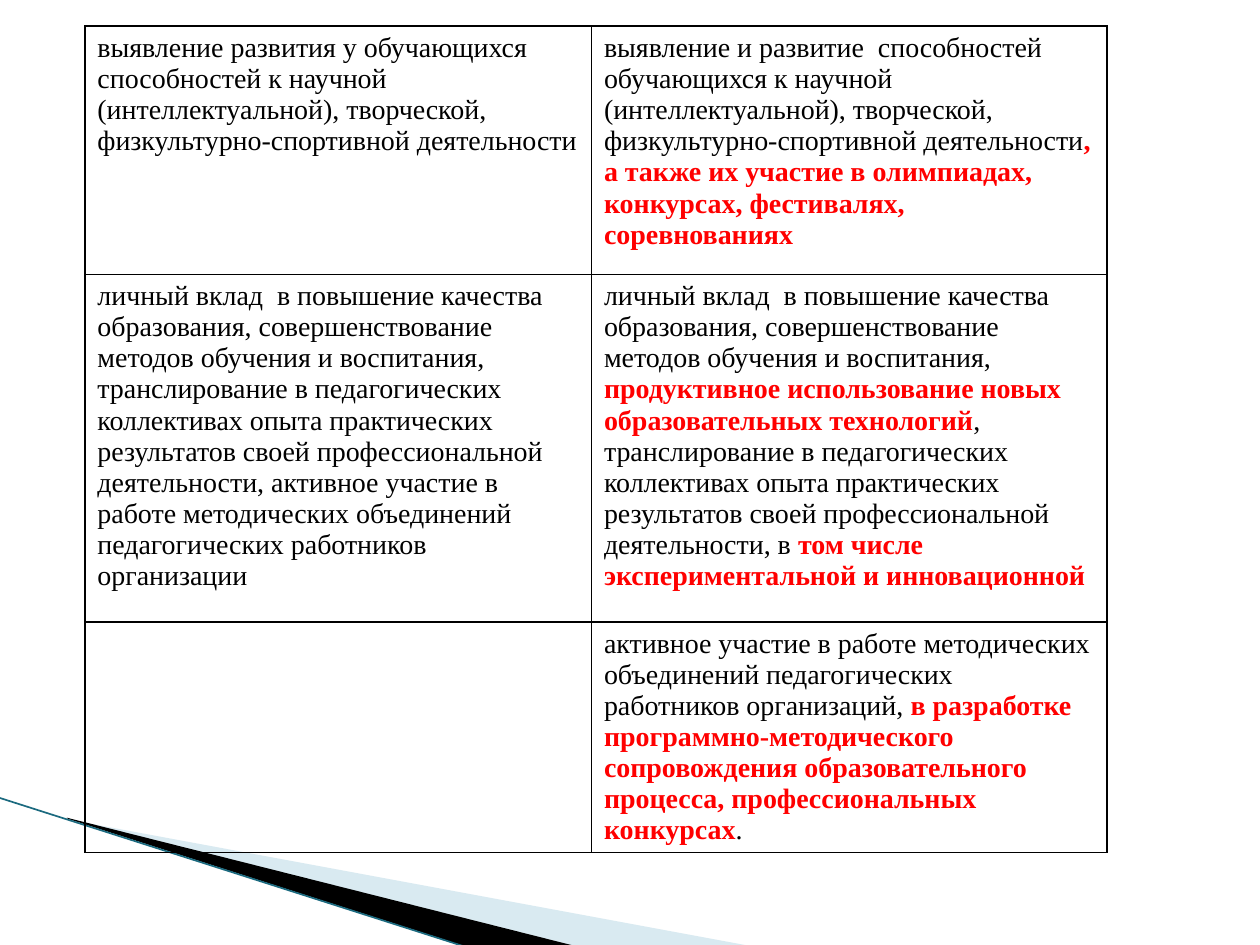
"""Build a slide with a two-column table comparing assessment criteria."""
from lxml import etree
from pptx import Presentation
from pptx.dml.color import RGBColor
from pptx.enum.shapes import MSO_CONNECTOR as CONN
from pptx.oxml.ns import qn
from pptx.util import Pt

BLACK = RGBColor(0x00, 0x00, 0x00)
RED = RGBColor(0xFF, 0x00, 0x00)
PALE = RGBColor(0xA0, 0xCB, 0xDC)
TEAL = RGBColor(0x1B, 0x6A, 0x7F)

COLS = [289.5, 294.5]
ROWS = [141.8, 198.7, 131.4]
CELLS = [
    [
        [("выявление развития у обучающихся способностей к научной (интеллектуальной), "
          "творческой, физкультурно-спортивной деятельности", False)],
        [("выявление и развитие  способностей обучающихся к научной (интеллектуальной), "
          "творческой, физкультурно-спортивной деятельности", False),
         (", а также их участие в олимпиадах, конкурсах, фестивалях, соревнованиях", True)],
    ],
    [
        [("личный вклад  в повышение качества образования, совершенствование методов "
          "обучения и воспитания, транслирование в педагогических коллективах опыта "
          "практических результатов своей профессиональной деятельности, активное участие "
          "в работе методических объединений педагогических работников организации", False)],
        [("личный вклад  в повышение качества образования, совершенствование методов "
          "обучения и воспитания, ", False),
         ("продуктивное использование новых образовательных технологий", True),
         (", транслирование в педагогических коллективах опыта практических результатов "
          "своей профессиональной деятельности, в ", False),
         ("том числе экспериментальной и инновационной", True)],
    ],
    [
        [],
        [("активное участие в работе методических объединений педагогических работников "
          "организаций, ", False),
         ("в разработке программно-методического сопровождения образовательного процесса, "
          "профессиональных конкурсах", True),
         (".", False)],
    ],
]
WEDGES = [
    ([(39.6, 468.5), (428.4, 540.5), (328.3, 540.5), (39.6, 468)], PALE, 40),
    ([(38.2, 467.3), (329, 540.7), (267.8, 541.4), (38.9, 468)], BLACK, 100),
]


def add_borders(cell):
    tcPr = cell._tc.get_or_add_tcPr()
    for side in ("lnL", "lnR", "lnT", "lnB"):
        ln = etree.SubElement(tcPr, qn(f"a:{side}"), w=str(Pt(1)))
        fill = etree.SubElement(ln, qn("a:solidFill"))
        etree.SubElement(fill, qn("a:srgbClr"), val=str(BLACK))


prs = Presentation()
prs.slide_width, prs.slide_height = Pt(720), Pt(540)
s = prs.slides.add_slide(prs.slide_layouts[6])

for points, color, alpha in WEDGES:
    pts = [(Pt(x), Pt(y)) for x, y in points]
    builder = s.shapes.build_freeform(*pts[0])
    builder.add_line_segments(pts[1:])
    sp = builder.convert_to_shape()
    sp.shadow.inherit = False
    sp.line.fill.background()
    sp.fill.solid()
    sp.fill.fore_color.rgb = color
    if alpha < 100:
        clr = sp.fill._xPr.find(qn("a:solidFill")).find(qn("a:srgbClr"))
        etree.SubElement(clr, qn("a:alpha"), val=str(alpha * 1000))

edge = s.shapes.add_connector(CONN.STRAIGHT, Pt(-0.7), Pt(455.8), Pt(267.1), Pt(541.4))
edge.line.color.rgb = TEAL
edge.line.width = Pt(0.95)
etree.SubElement(edge._element.spPr, qn("a:effectLst"))

frame = s.shapes.add_table(len(ROWS), len(COLS), Pt(48.5), Pt(15), Pt(sum(COLS)), Pt(sum(ROWS)))
table = frame.table
table.first_row = table.horz_banding = False
for col, width in zip(table.columns, COLS):
    col.width = Pt(width)
for row, height, contents in zip(table.rows, ROWS, CELLS):
    row.height = Pt(height)
    for cell, runs in zip(row.cells, contents):
        add_borders(cell)
        cell.fill.background()
        p = cell.text_frame.paragraphs[0]
        for text, is_new in runs:
            r = p.add_run()
            r.text = text
            for name, value in {"name": "Times New Roman", "size": Pt(16), "bold": is_new}.items():
                setattr(r.font, name, value)
            r.font.color.rgb = RED if is_new else BLACK

prs.save("out.pptx")
